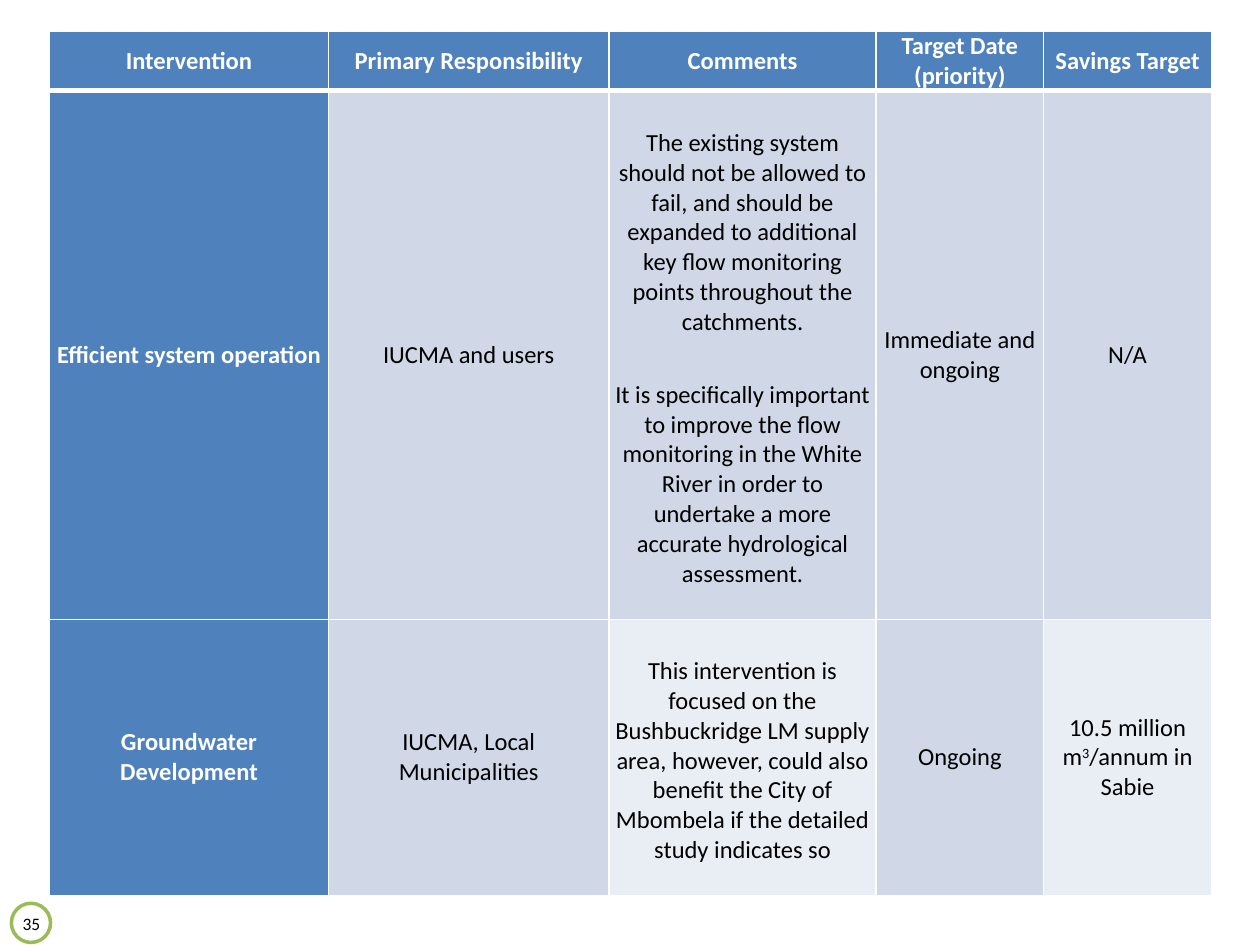
from lxml import etree
from pptx import Presentation
from pptx import util as u
from pptx.dml.color import RGBColor
from pptx.enum import shapes, text
from pptx.oxml import ns

COLORS = {"blue": "4F81BD", "band": "D0D8E8", "pale": "E9EDF4",
          "green": "9BBB59", "white": "FFFFFF", "black": "000000"}
COL_WIDTHS = [5.62, 5.66, 5.38, 3.38, 3.38]
ROW_HEIGHTS = [1.21, 10.66, 5.56]
COMMENTS = 2
PALE_CELLS = {(2, 2), (2, 4)}

# A cell is a list of paragraphs; ^ encloses superscript text.
ROWS = [
    [["Intervention"], ["Primary Responsibility"], ["Comments"],
     ["Target Date (priority)"], ["Savings Target"]],
    [["Efficient system operation"], ["IUCMA and users"],
     ["The existing system should not be allowed to fail, and should be "
      "expanded to additional key flow monitoring points throughout the "
      "catchments.",
      "It is specifically important to improve the flow monitoring in the "
      "White River in order to undertake a more accurate hydrological "
      "assessment."],
     ["Immediate and ongoing"], ["N/A"]],
    [["Groundwater Development"], ["IUCMA, Local Municipalities"],
     ["This intervention is focused on the Bushbuckridge LM supply area, "
      "however, could also benefit the City of Mbombela if the detailed "
      "study indicates so"],
     ["Ongoing"], ["10.5 million m^3^/annum in Sabie"]],
]


def rgb(name):
    return RGBColor.from_string(COLORS[name])


def add_borders(cell, widths):
    """Draw white borders; widths in points, ordered left, right, top, bottom."""
    tcPr = cell._tc.get_or_add_tcPr()
    for side, width in zip("LRTB", widths):
        ln = etree.SubElement(tcPr, ns.qn(f"a:ln{side}"), w=str(u.Pt(width)))
        fill = etree.SubElement(ln, ns.qn("a:solidFill"))
        etree.SubElement(fill, ns.qn("a:srgbClr"), val=COLORS["white"])


prs = Presentation()
prs.slide_width, prs.slide_height = u.Cm(25.4), u.Cm(19.05)
s = prs.slides.add_slide(prs.slide_layouts[6])

# Page number badge
sp = s.shapes.add_shape(shapes.MSO_SHAPE.OVAL, u.Cm(0.23), u.Cm(18.21),
                        u.Cm(0.79), u.Cm(0.79))
sp.shadow.inherit = False
sp.fill.solid()
sp.fill.fore_color.rgb = rgb("white")
sp.line.color.rgb = rgb("green")
sp.line.width = u.Pt(2)

tf = s.shapes.add_textbox(u.Cm(0.23), u.Cm(18.29), u.Cm(0.81), u.Cm(0.51)).text_frame
tf.word_wrap = True
tf.margin_left = tf.margin_right = 0
p = tf.paragraphs[0]
p.text = "35"
p.alignment = text.PP_ALIGN.CENTER
p.font.name, p.font.size = "Calibri", u.Pt(10)
p.font.color.rgb = rgb("black")

# Interventions table
table = s.shapes.add_table(len(ROWS), len(COL_WIDTHS), u.Cm(1), u.Cm(0.62),
                           u.Cm(sum(COL_WIDTHS)), u.Cm(sum(ROW_HEIGHTS))).table
table.horz_banding = False
for col, width in zip(table.columns, COL_WIDTHS):
    col.width = u.Cm(width)
for row, height in zip(table.rows, ROW_HEIGHTS):
    row.height = u.Cm(height)

for i, row in enumerate(ROWS):
    for j, paragraphs in enumerate(row):
        cell = table.cell(i, j)
        heading = i == 0 or j == 0
        add_borders(cell, (1, 1, 3 if i == 1 else 1, 3 if i == 0 else 1))
        cell.fill.solid()
        cell.fill.fore_color.rgb = rgb(
            "blue" if heading else "pale" if (i, j) in PALE_CELLS else "band")
        cell.vertical_anchor = text.MSO_ANCHOR.MIDDLE
        cell.margin_left = cell.margin_right = u.Cm(0.05)
        cell.margin_top = u.Cm(0.13 if i and j == COMMENTS else 0)
        cell.margin_bottom = 0
        tf = cell.text_frame
        for k, content in enumerate(paragraphs):
            p = tf.add_paragraph() if k else tf.paragraphs[0]
            p.alignment = text.PP_ALIGN.CENTER
            if k:
                p.space_before = u.Pt(24.6)
            p.font.name, p.font.size, p.font.bold = "Calibri", u.Pt(14), heading
            p.font.color.rgb = rgb("white" if heading else "black")
            for n, part in enumerate(content.split("^")):
                r = p.add_run()
                r.text = part
                if n % 2:
                    r._r.get_or_add_rPr().set("baseline", "30000")

prs.save("out.pptx")
